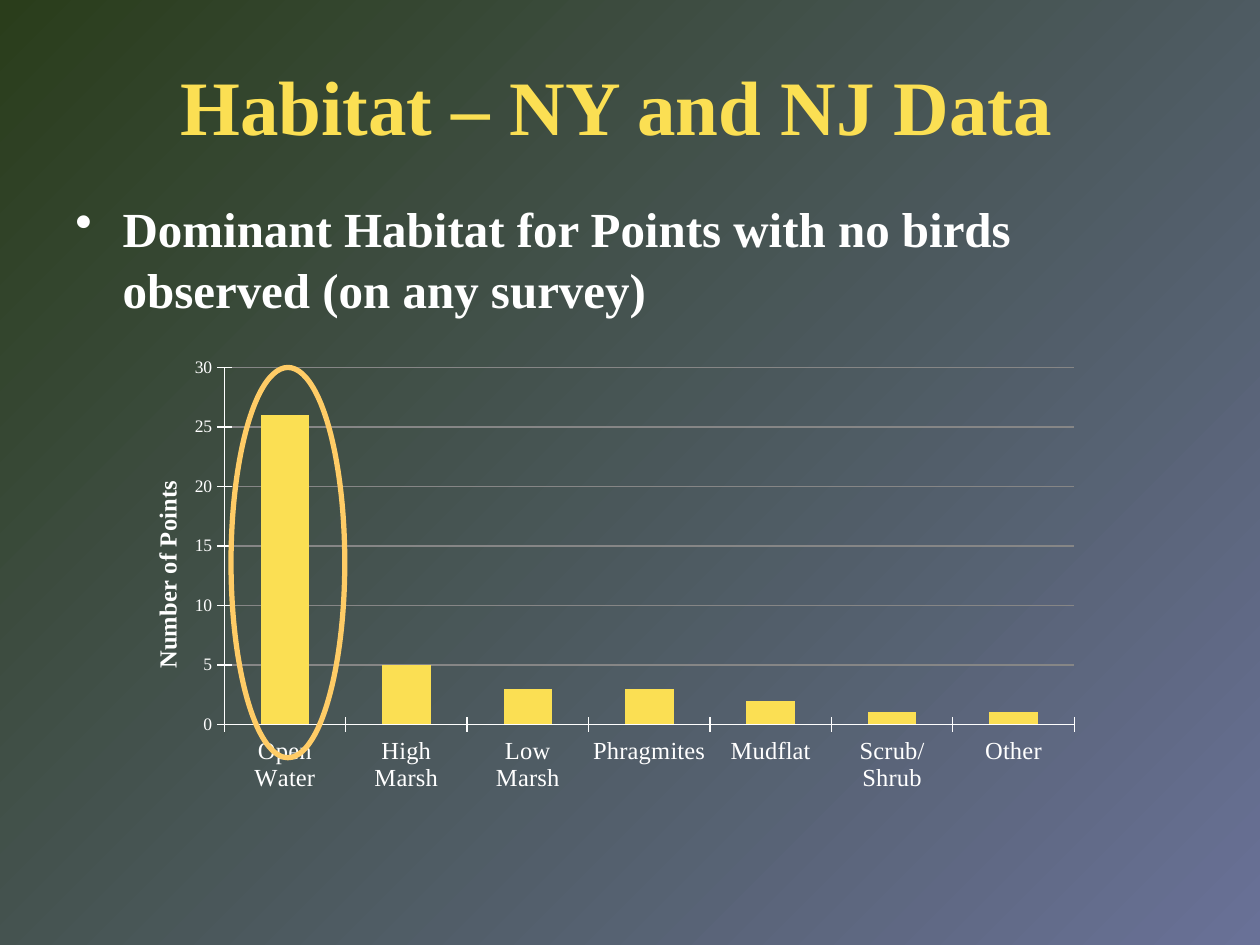
from lxml import etree
from pptx import Presentation
from pptx.chart.data import CategoryChartData
from pptx.dml.color import RGBColor
from pptx.enum.chart import XL_CHART_TYPE, XL_TICK_MARK
from pptx.enum.shapes import MSO_SHAPE
from pptx.enum.text import MSO_AUTO_SIZE
from pptx.oxml import parse_xml
from pptx.oxml.ns import nsdecls, qn
from pptx.util import Pt

FONT = "Times New Roman"
YELLOW, WHITE, GRAY, ORANGE = "FBDF53", "FFFFFF", "868686", "FFCC66"
HABITATS = {
    "Open Water": 26, "High Marsh": 5, "Low Marsh": 3, "Phragmites": 3,
    "Mudflat": 2, "Scrub/Shrub": 1, "Other": 1,
}


def rgb(value):
    return RGBColor.from_string(value)


def style_font(font, size, color, bold=False):
    font.name, font.size, font.bold = FONT, Pt(size), bold
    font.color.rgb = rgb(color)


def style_line(line, color, width):
    line.color.rgb = rgb(color)
    line.width = Pt(width)


def set_background(s, start, end):
    fill = s.background.fill
    fill.gradient()
    fill.gradient_angle = 315
    for stop, color, position in zip(fill.gradient_stops, (start, end), (0, 1)):
        stop.color.rgb = rgb(color)
        stop.position = position


def add_text(s, box, text, size, color, wrap=True):
    tf = s.shapes.add_textbox(*map(Pt, box)).text_frame
    tf.word_wrap = wrap
    tf.text = text
    p = tf.paragraphs[0]
    style_font(p.runs[0].font, size, color, bold=True)
    return tf


def add_bullet(p, indent):
    pPr = p._p.get_or_add_pPr()
    pPr.set("marL", str(Pt(indent)))
    pPr.set("indent", str(Pt(-indent)))
    etree.SubElement(pPr, qn("a:buChar")).set("char", "•")


def style_axis(axis, size):
    axis.major_tick_mark = XL_TICK_MARK.CROSS
    axis.minor_tick_mark = XL_TICK_MARK.NONE
    style_line(axis.format.line, WHITE, 0.75)
    style_font(axis.tick_labels.font, size, WHITE)


def set_plot_area(chart, x, y, w, h):
    places = "".join(f'<c:{tag} val="{value}"/>' for tag, value in
                     zip(("x", "y", "w", "h"), (x, y, w, h)))
    layout = parse_xml(
        f'<c:layout {nsdecls("c")}><c:manualLayout><c:layoutTarget val="inner"/>'
        f'<c:xMode val="edge"/><c:yMode val="edge"/>{places}'
        '</c:manualLayout></c:layout>')
    area = chart._chartSpace.chart.plotArea
    for old in area.findall(qn("c:layout")):
        area.remove(old)
    area.insert(0, layout)


def add_column_chart(s, box, values, axis_title):
    data = CategoryChartData()
    data.categories = list(values)
    data.add_series("Series 1", list(values.values()))
    chart = s.shapes.add_chart(
        XL_CHART_TYPE.COLUMN_CLUSTERED, *map(Pt, box), data).chart
    chart.has_legend = chart.has_title = False
    style_font(chart.font, 10, "000000")

    # Columns
    plot = chart.plots[0]
    plot.vary_by_categories = False
    plot.gap_width = 150
    fill = plot.series[0].format.fill
    fill.solid()
    fill.fore_color.rgb = rgb(YELLOW)

    # Axes
    style_axis(chart.category_axis, 14)
    axis = chart.value_axis
    style_axis(axis, 10)
    axis.minimum_scale, axis.maximum_scale, axis.major_unit = 0, 30, 5
    axis.has_major_gridlines = True
    style_line(axis.major_gridlines.format.line, GRAY, 0.75)
    tf = axis.axis_title.text_frame
    tf.text = axis_title
    style_font(tf.paragraphs[0].runs[0].font, 14, WHITE, bold=True)
    set_plot_area(chart, 0.08, 0.02, 0.88, 0.68)


def add_ring(s, box, color, width):
    sp = s.shapes.add_shape(MSO_SHAPE.OVAL, *map(Pt, box))
    sp.shadow.inherit = False
    sp.fill.background()
    style_line(sp.line, color, width)


def main():
    prs = Presentation()
    prs.slide_width, prs.slide_height = Pt(720), Pt(540)
    s = prs.slides.add_slide(prs.slide_layouts[6])
    set_background(s, "2A3D1B", "697197")

    # Statement
    tf = add_text(s, (36, 108, 648, 78),
                  "Dominant Habitat for Points with no birds observed (on any survey)",
                  28, WHITE)
    p = tf.paragraphs[0]
    add_bullet(p, 27)
    p.line_spacing = 1.05

    # Title
    tf = add_text(s, (96, 30, 518, 60.5), "Habitat – NY and NJ Data",
                  44, YELLOW, wrap=False)
    tf.auto_size = MSO_AUTO_SIZE.SHAPE_TO_FIT_TEXT

    # Chart with the tallest column circled
    add_column_chart(s, (84, 204, 552, 300), HABITATS, "Number of Points")
    add_ring(s, (132, 210, 65, 223), ORANGE, 3)

    prs.save("out.pptx")


if __name__ == "__main__":
    main()
